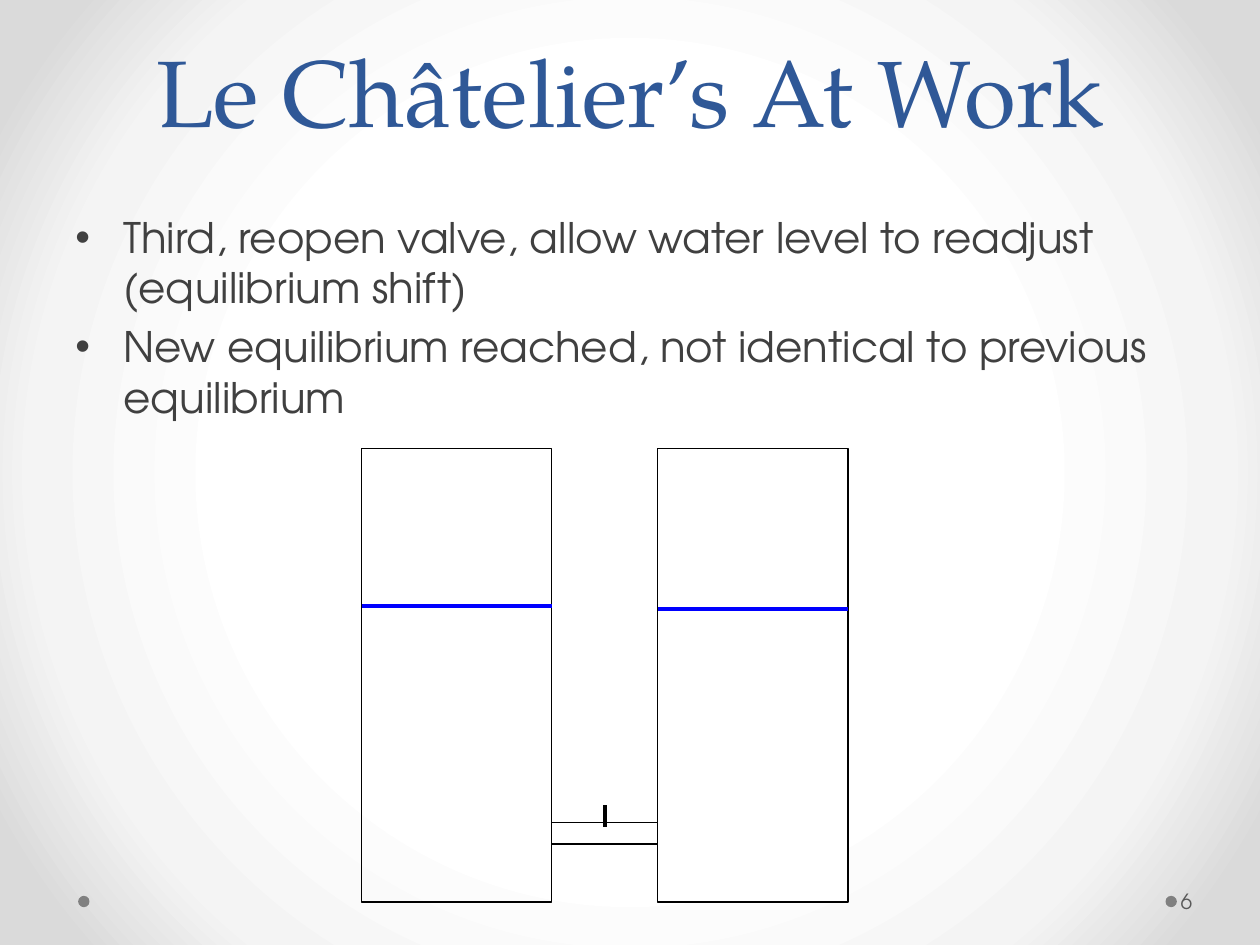
from lxml.etree import SubElement
from pptx import Presentation
from pptx.dml.color import RGBColor
from pptx.enum.shapes import MSO_CONNECTOR, MSO_SHAPE
from pptx.enum.text import MSO_ANCHOR, PP_ALIGN
from pptx.oxml import parse_xml
from pptx.oxml.ns import nsdecls, qn
from pptx.util import Inches, Pt

BLACK = RGBColor(0, 0, 0)
WHITE = RGBColor(255, 255, 255)
WATER = RGBColor(0, 0, 255)
NAVY = RGBColor(0x2F, 0x58, 0x97)
DARK = RGBColor(0x40, 0x40, 0x40)
GREY = RGBColor(0x59, 0x59, 0x59)
DOT = RGBColor(0x80, 0x80, 0x80)
SERIF = "TeX Gyre Pagella"
SANS = "TeX Gyre Adventor"
COLS, ROWS = 100, 75


def put(item, values):
    for name, value in values.items():
        setattr(item, name, value)


class Board:
    def __init__(self):
        self.deck = Presentation()
        put(self.deck, {"slide_width": Inches(10), "slide_height": Inches(7.5)})
        self.slide = self.deck.slides.add_slide(self.deck.slide_layouts[6])
        self.shapes = self.slide.shapes

    def grid(self, x, y):
        return (round(self.deck.slide_width * x / COLS),
                round(self.deck.slide_height * y / ROWS))

    def glow(self, stops):
        self.slide.background.fill.gradient()
        old = self.slide.element.find(".//" + qn("a:gradFill"))
        marks = "".join(
            f'<a:gs pos="{share * 1000}"><a:srgbClr val="{color}"/></a:gs>'
            for share, color in stops)
        old.getparent().replace(old, parse_xml(
            f'<a:gradFill {nsdecls("a")} rotWithShape="1"><a:gsLst>{marks}</a:gsLst>'
            '<a:path path="circle"><a:fillToRect l="50000" t="50000" '
            'r="50000" b="50000"/></a:path></a:gradFill>'))

    def shape(self, kind, x, y, w, h, fill=None, line=None):
        item = self.shapes.add_shape(kind, *self.grid(x, y), *self.grid(w, h))
        item.shadow.inherit = False
        if fill is None:
            item.fill.background()
        else:
            item.fill.solid()
            item.fill.fore_color.rgb = fill
        if line is None:
            item.line.fill.background()
        else:
            item.line.color.rgb = line
            item.line.width = Pt(0.75)

    def line(self, x, y, w, h, color):
        item = self.shapes.add_connector(
            MSO_CONNECTOR.STRAIGHT, *self.grid(x, y), *self.grid(x + w, y + h))
        item.line.color.rgb = color
        item.line.width = Pt(2.25)
        SubElement(item.element.spPr, qn("a:effectLst"))

    def text(self, x, y, w, h, lines, font, color, frame=None, para=None, bullet=False):
        box = self.shapes.add_textbox(*self.grid(x, y), *self.grid(w, h)).text_frame
        put(box, {"word_wrap": True, **(frame or {})})
        box.text = "\n".join(lines)
        for part in box.paragraphs:
            put(part, para or {})
            put(part.runs[0].font, font)
            part.runs[0].font.color.rgb = color
            if bullet:
                props = part._p.get_or_add_pPr()
                props.set("marL", str(Inches(0.38)))
                props.set("indent", str(-Inches(0.38)))
                SubElement(props, qn("a:buFont")).set("typeface", "Arial")
                SubElement(props, qn("a:buChar")).set("char", "•")


def main():
    board = Board()
    board.glow([(50, "FFFFFF"), (76, "F4F4F4"), (92, "DADADA")])
    for x in (92.5, 6.2):
        board.shape(MSO_SHAPE.OVAL, x, 71.1, 0.9, 0.9, DOT)
    board.text(5, 0, 90, 12.1, ["Le Châtelier’s At Work"],
               {"name": SERIF, "size": Pt(54)}, NAVY,
               {"vertical_anchor": MSO_ANCHOR.BOTTOM},
               {"alignment": PP_ALIGN.CENTER, "line_spacing": Pt(58)})
    board.text(5, 16.3, 90, 49.5,
               ["Third, reopen valve, allow water level to readjust (equilibrium shift)",
                "New equilibrium reached, not identical to previous equilibrium"],
               {"name": SANS, "size": Pt(24)}, DARK,
               para={"space_before": Pt(4.8)}, bullet=True)

    left, right, top, wide, high = 28.7, 52.2, 35.6, 15.1, 36
    pipe = left + wide
    gap = right - pipe
    for x, fill in ((left, None), (right, WHITE)):
        board.shape(MSO_SHAPE.RECTANGLE, x, top, wide, high, fill, BLACK)
    board.shape(MSO_SHAPE.RECTANGLE, pipe, 65.3, gap, 1.7, WHITE, BLACK)
    for x, level in ((left, 48.1), (right, 48.3)):
        board.line(x, level, wide, 0, WATER)
    board.line(pipe + gap / 2, 63.9, 0, 1.7, BLACK)

    board.text(93.4, 69.5, 6.1, 4, ["6"], {"name": SANS, "size": Pt(12)}, GREY,
               {"vertical_anchor": MSO_ANCHOR.MIDDLE, "margin_left": Inches(0.03),
                "margin_right": Inches(0.05)})
    board.deck.save("out.pptx")


if __name__ == "__main__":
    main()
